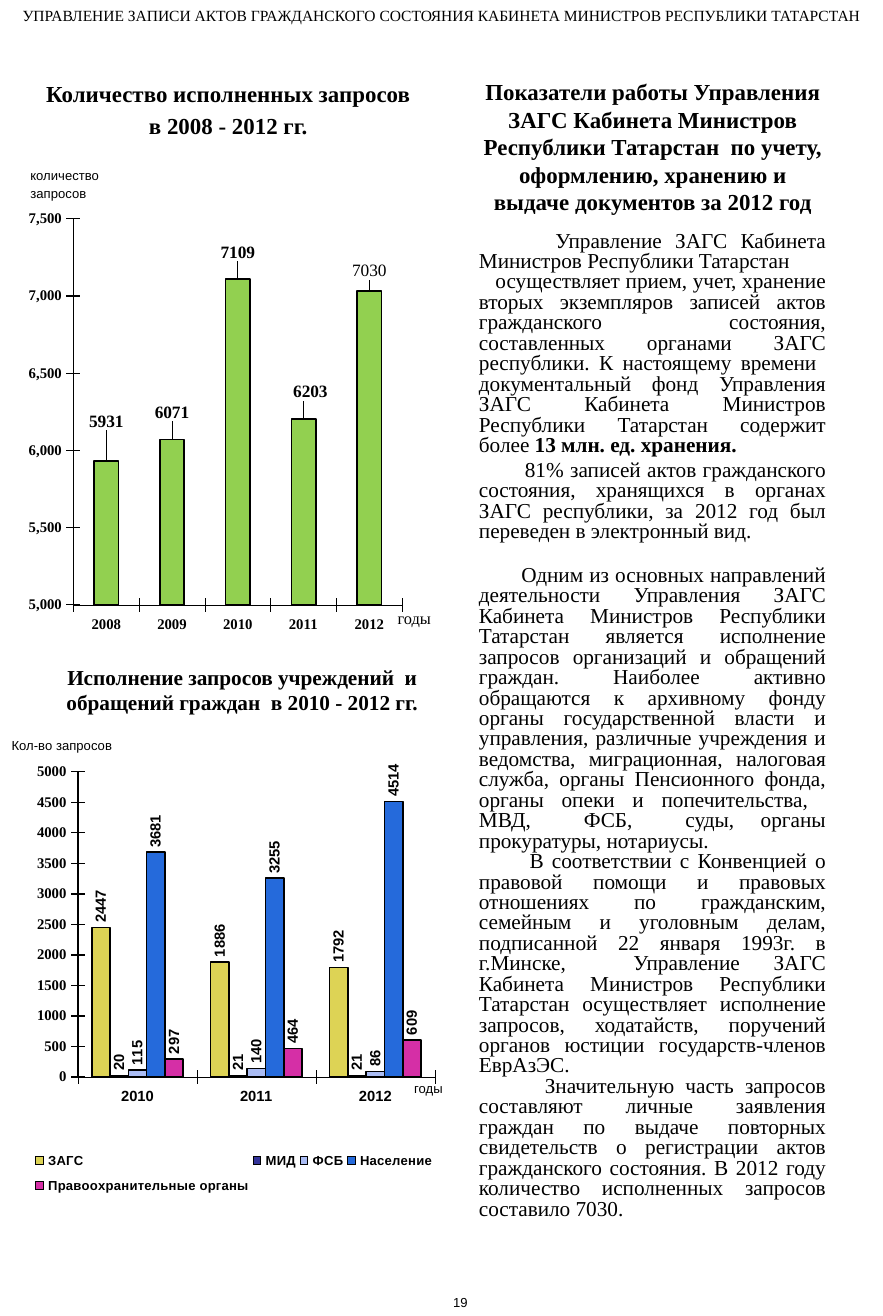
"""Build a one-page report on civil registry requests with two column charts."""
from lxml import etree
from pptx import Presentation
from pptx.chart.data import CategoryChartData
from pptx.dml.color import RGBColor
from pptx.enum.chart import XL_CHART_TYPE, XL_LABEL_POSITION, XL_LEGEND_POSITION, XL_TICK_MARK
from pptx.enum.text import MSO_ANCHOR, PP_ALIGN
from pptx.oxml.ns import qn
from pptx.util import Inches, Pt

COLUMN = XL_CHART_TYPE.COLUMN_CLUSTERED
OUTER = XL_LABEL_POSITION.OUTSIDE_END
BOTTOM = XL_LEGEND_POSITION.BOTTOM
CROSS = XL_TICK_MARK.CROSS
LEFT, CENTER, JUSTIFY = PP_ALIGN.LEFT, PP_ALIGN.CENTER, PP_ALIGN.JUSTIFY
MIDDLE = MSO_ANCHOR.MIDDLE
BLACK = RGBColor(0, 0, 0)
WHITE = RGBColor(255, 255, 255)
GREEN = RGBColor(0x92, 0xD0, 0x50)
YELLOW = RGBColor(0xDD, 0xD3, 0x55)
NAVY = RGBColor(0x33, 0x33, 0x99)
PALE = RGBColor(0xAA, 0xBC, 0xF4)
BLUE = RGBColor(0x25, 0x6A, 0xDB)
PINK = RGBColor(0xD5, 0x2F, 0xA6)
SERIF, SANS = "Times New Roman", "Arial"

TITLE = ("Показатели работы Управления ЗАГС Кабинета Министров Республики Татарстан  "
         "по учету, оформлению, хранению и выдаче документов за 2012 год")

BODY = [
    (0.65, 0, ["Управление ЗАГС Кабинета Министров Республики Татарстан"]),
    (0.14, 0, [
        "осуществляет прием, учет, хранение вторых экземпляров записей актов гражданского "
        "состояния, составленных органами ЗАГС республики. К настоящему времени  "
        "документальный фонд Управления ЗАГС Кабинета Министров Республики Татарстан "
        "содержит более ", "13 млн. ед. хранения."]),
    (0.39, 2.6, [
        "81% записей актов гражданского состояния, хранящихся в органах ЗАГС республики, "
        "за 2012 год был переведен в электронный вид."]),
    (0.36, 14.4, [
        "Одним из основных направлений деятельности Управления ЗАГС Кабинета Министров "
        "Республики Татарстан является исполнение запросов организаций и обращений граждан. "
        "Наиболее активно обращаются к архивному фонду органы государственной власти и "
        "управления, различные учреждения и ведомства, миграционная, налоговая служба, "
        "органы Пенсионного фонда, органы опеки и попечительства,  МВД,  ФСБ,  суды, "
        "органы прокуратуры, нотариусы."]),
    (0.43, 0, [
        "В соответствии с Конвенцией о правовой помощи и правовых отношениях по "
        "гражданским, семейным и уголовным делам, подписанной 22 января 1993г. в г.Минске,  "
        "Управление ЗАГС Кабинета Министров Республики Татарстан осуществляет исполнение "
        "запросов, ходатайств, поручений органов юстиции государств-членов ЕврАзЭС."]),
    (0.56, 0, [
        "Значительную часть запросов составляют личные заявления граждан по выдаче "
        "повторных свидетельств о регистрации актов гражданского состояния. В 2012 году "
        "количество исполненных запросов составило 7030."]),
]

NOTES = [
    ((0.21, 0.63, 3.46, 0.62), ["Количество исполненных запросов", "в 2008 - 2012 гг."],
     14, SERIF, True, CENTER),
    ((3.28, 5.12, 0.63, 0.27), ["годы"], 10, SERIF, False, LEFT),
    ((3.75, 10.95, 0.39, 0.24), ["19"], 8, SANS, False, LEFT),
    ((0, 0, 7.5, 0.26),
     ["УПРАВЛЕНИЕ ЗАПИСИ АКТОВ ГРАЖДАНСКОГО СОСТОЯНИЯ КАБИНЕТА МИНИСТРОВ РЕСПУБЛИКИ ТАТАРСТАН"],
     9.5, SERIF, False, CENTER),
    ((0, 6.22, 1.31, 0.24), ["Кол-во запросов"], 8, SANS, False, LEFT),
    ((0.44, 5.59, 3.23, 0.54),
     ["Исполнение запросов учреждений  и обращений граждан  в 2010 - 2012 гг."],
     13, SERIF, True, CENTER),
    ((0.16, 1.37, 0.94, 0.4), ["количество", "запросов"], 8, SANS, False, LEFT),
    ((3.42, 9.13, 0.52, 0.29), ["годы"], 8, SANS, False, LEFT),
]

YEARS = ["2008", "2009", "2010", "2011", "2012"]
TOTALS = [("Series 1", [5931, 6071, 7109, 6203, 7030], GREEN)]
SHIFTS = [(0, -0.04), (0, -0.02), (0, -0.02), (0.01, -0.02), (0, -0.01)]
SOURCES = [
    ("ЗАГС", [2447, 1886, 1792], YELLOW),
    ("МИД", [20, 21, 21], NAVY),
    ("ФСБ", [115, 140, 86], PALE),
    ("Население", [3681, 3255, 4514], BLUE),
    ("Правоохранительные органы", [297, 464, 609], PINK),
]


def style(font, size, name, bold):
    """Set size, face, weight and black colour."""
    font.size, font.name, font.bold = Pt(size), name, bold
    font.color.rgb = BLACK


def place(shape, box):
    """Move a shape to a box in inches."""
    shape.left, shape.top, shape.width, shape.height = map(Inches, box)


def write(para, text, size, name, bold):
    """Add one formatted run."""
    run = para.add_run()
    run.text = text
    style(run.font, size, name, bold)


def lines(frame):
    """Yield the first paragraph, then new ones."""
    yield frame.paragraphs[0]
    while True:
        yield frame.add_paragraph()


def arrange(node, index, inner=False, **spots):
    """Give a chart part a manual layout."""
    for old in node.findall(qn("c:layout")):
        node.remove(old)
    outer = etree.Element(qn("c:layout"))
    manual = etree.SubElement(outer, qn("c:manualLayout"))
    items = [("layoutTarget", "inner")] if inner else []
    if "w" in spots:
        items += [("xMode", "edge"), ("yMode", "edge")]
    for tag, val in items + list(spots.items()):
        etree.SubElement(manual, qn("c:" + tag)).set("val", str(val))
    node.insert(index, outer)


def add_bars(slide, box, cats, rows, gap, plot, scale, faces, fmt, size):
    """Add a column chart with labels and two plain axes."""
    data = CategoryChartData()
    data.categories = cats
    for name, vals, _ in rows:
        data.add_series(name, vals)
    chart = slide.shapes.add_chart(COLUMN, *map(Inches, box), data).chart
    chart.has_title = chart.has_legend = False
    style(chart.font, 9, SANS, True)
    bars = chart.plots[0]
    bars.gap_width, bars.overlap, bars.vary_by_categories = gap, 0, False
    axes = (chart.category_axis, chart.value_axis)
    for axis, face, width in zip(axes, faces, (0.25, 0.79)):
        axis.has_major_gridlines = False
        axis.major_tick_mark = CROSS
        style(axis.tick_labels.font, 9, face, True)
        axis.format.line.color.rgb = BLACK
        axis.format.line.width = Pt(width)
    axis = chart.value_axis
    axis.minimum_scale, axis.maximum_scale, axis.major_unit = scale
    axis.tick_labels.number_format = fmt
    axis.tick_labels.number_format_is_linked = False
    for part, (_, _, color) in zip(bars.series, rows):
        part.format.fill.solid()
        part.format.fill.fore_color.rgb = color
        part.format.line.color.rgb = BLACK
        part.format.line.width = Pt(1)
        tags = part.data_labels
        tags.show_value, tags.position = True, OUTER
        style(tags.font, size, faces[0], True)
    area = chart.element.find(".//" + qn("c:plotArea"))
    arrange(area, 0, True, **dict(zip("xywh", plot)))
    return chart


def main():
    """Compose the page and save it."""
    deck = Presentation()
    deck.slide_width, deck.slide_height = Inches(7.5), Inches(11.18)
    slide = deck.slides.add_slide(deck.slide_layouts[5])
    slide.background.fill.solid()
    slide.background.fill.fore_color.rgb = WHITE

    head = slide.shapes.title
    place(head, (3.98, 0.98, 3.13, 0.53))
    head.text_frame.word_wrap = True
    head.text_frame.vertical_anchor = MIDDLE
    para = head.text_frame.paragraphs[0]
    para.alignment = CENTER
    write(para, TITLE, 14, SERIF, True)

    chart = add_bars(slide, (0, 0.67, 5.83, 5.45), YEARS, TOTALS, 170,
                     (0.107, 0.218, 0.479, 0.602), (5000, 7500, 500),
                     (SERIF, SERIF), "#,##0", 10.6)
    points = chart.plots[0].series[0].points
    for i, (x, y) in enumerate(SHIFTS):
        tag = points[i].data_label
        style(tag.font, 10.6, SERIF, i < len(SHIFTS) - 1)
        tag.position = OUTER
        node = chart.element.findall(".//" + qn("c:dLbl"))[i]
        arrange(node, 1, x=x, y=y)

    chart = add_bars(slide, (-0.31, 6.14, 4.14, 4.3), YEARS[2:], SOURCES, 150,
                     (0.235, 0.097, 0.732, 0.603), (0, 5000, 500),
                     (SANS, SERIF), "General", 9)
    for node in chart.element.findall(".//" + qn("c:dLbls")):
        node.find(".//" + qn("a:bodyPr")).set("rot", "-5400000")
    chart.has_legend = True
    key = chart.legend
    key.position, key.include_in_layout = BOTTOM, False
    style(key.font, 8, SANS, True)
    arrange(chart.element.find(".//" + qn("c:legend")), 1, x=0.14, y=0.83, w=0.83, h=0.12)

    frame = slide.shapes.add_textbox(*map(Inches, (3.97, 1.92, 3.14, 8.5))).text_frame
    frame.word_wrap = True
    for para, (indent, gap, runs) in zip(lines(frame), BODY):
        para.alignment, para.line_spacing, para.space_before = JUSTIFY, 0.8, Pt(gap)
        para._p.get_or_add_pPr().set("indent", str(Inches(indent)))
        for i, text in enumerate(runs):
            write(para, text, 13, SERIF, i > 0)

    for box, texts, size, face, bold, side in NOTES:
        frame = slide.shapes.add_textbox(*map(Inches, box)).text_frame
        frame.word_wrap = True
        for i, text in enumerate(texts):
            para = frame.add_paragraph() if i else frame.paragraphs[0]
            para.alignment, para.space_before = side, Pt(size * 0.2 * i)
            write(para, text, size, face, bold)
    deck.save("out.pptx")


if __name__ == "__main__":
    main()
